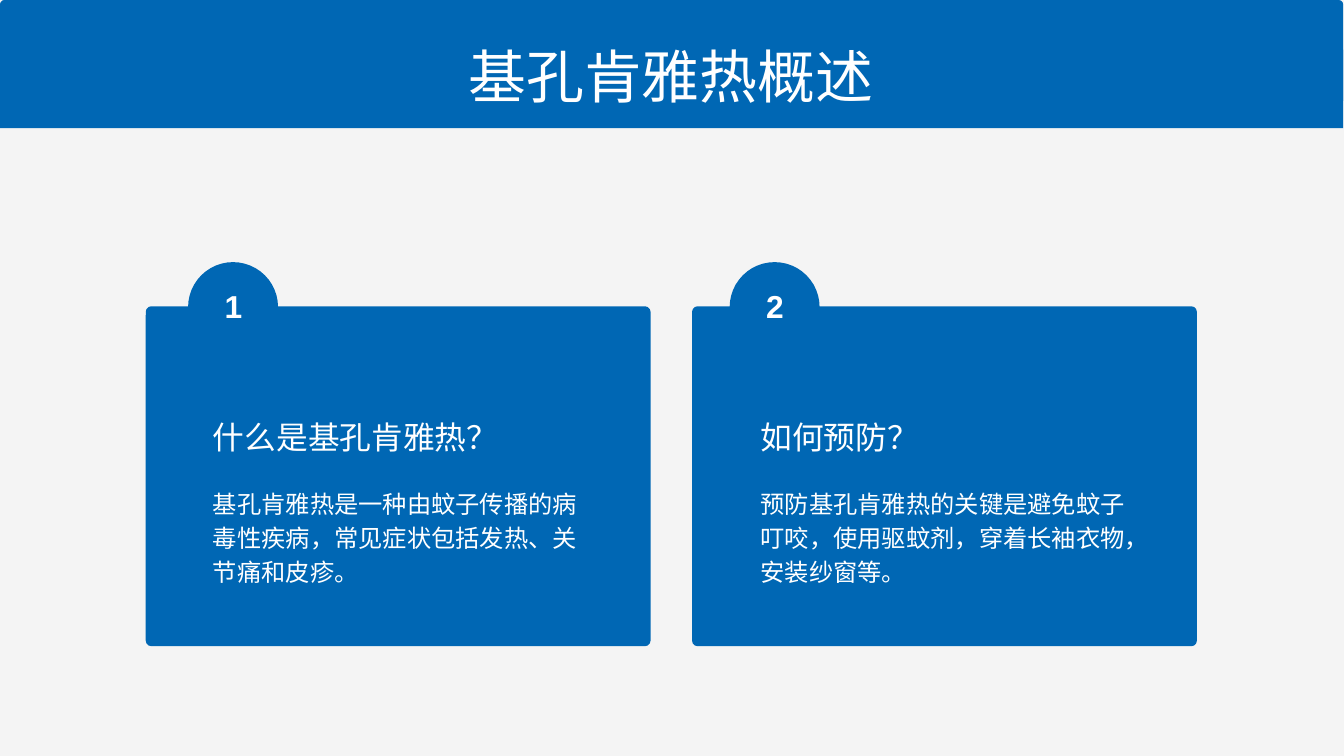
import dataclasses

import lxml.etree
import pptx
import pptx.dml.color
import pptx.enum.shapes
import pptx.enum.text
import pptx.oxml.ns
import pptx.util

Cm = pptx.util.Cm
Pt = pptx.util.Pt
Shape = pptx.enum.shapes.MSO_SHAPE
Align = pptx.enum.text.PP_ALIGN
Anchor = pptx.enum.text.MSO_ANCHOR


@dataclasses.dataclass(frozen=True)
class Theme:
    background: str = "F4F4F4"
    blue: str = "0067B4"
    white: str = "FFFFFF"
    chinese: str = "Noto Sans CJK SC"
    latin: str = "Arial"
    title: int = 62
    heading: int = 34
    body: int = 26


THEME = Theme()

# Left edges in cm of each card, its badge and its text, then the wording
CARDS = [
    (5.51, 7.11, 8.05, "什么是基孔肯雅热？",
     "基孔肯雅热是一种由蚊子传播的病毒性疾病，常见症状包括发热、关节痛和皮疹。"),
    (26.16, 27.58, 28.75, "如何预防？",
     "预防基孔肯雅热的关键是避免蚊子叮咬，使用驱蚊剂，穿着长袖衣物，安装纱窗等。"),
]


def rgb(value):
    return pptx.dml.color.RGBColor.from_string(value)


def apply_format(target, values):
    for name, value in values.items():
        setattr(target, name, value)


def add_panel(page, kind, left, top, width, height, radius=None):
    """Add a plain blue shape; radius is the corner radius in cm."""
    panel = page.shapes.add_shape(kind, Cm(left), Cm(top), Cm(width), Cm(height))
    panel.shadow.inherit = False
    panel.fill.solid()
    panel.fill.fore_color.rgb = rgb(THEME.blue)
    panel.line.fill.background()
    if radius is not None:
        panel.adjustments[0] = radius / min(width, height)


def write_text(box, text, size, spacing, font=THEME.chinese, bold=False,
               align=Align.LEFT, anchor=Anchor.TOP):
    """Put one formatted white paragraph in a box without margins."""
    apply_format(box.text_frame, {
        "word_wrap": True,
        "auto_size": pptx.enum.text.MSO_AUTO_SIZE.NONE,
        "vertical_anchor": anchor,
        "margin_left": 0, "margin_right": 0,
        "margin_top": 0, "margin_bottom": 0,
    })
    para = box.text_frame.paragraphs[0]
    apply_format(para, {"alignment": align, "line_spacing": Pt(spacing),
                        "space_before": Pt(0)})
    span = para.add_run()
    span.text = text
    apply_format(span.font, {"size": Pt(size), "name": font, "bold": bold})
    span.font.color.rgb = rgb(THEME.white)
    east_asian = lxml.etree.SubElement(
        span.font._element, pptx.oxml.ns.qn("a:ea"))
    east_asian.set("typeface", font)


def add_text(page, left, top, width, height, *content, **options):
    box = page.shapes.add_textbox(Cm(left), Cm(top), Cm(width), Cm(height))
    write_text(box, *content, **options)


def add_header(page, text):
    add_panel(page, Shape.ROUNDED_RECTANGLE, 0, 0, 50.77, 3.96, radius=0.17)
    add_panel(page, Shape.RECTANGLE, 0, 1.88, 50.77, 2.97)
    title = page.shapes.title
    apply_format(title, {"left": Cm(7.7), "top": Cm(1.09),
                         "width": Cm(35.33), "height": Cm(2.92)})
    write_text(title, text, THEME.title, 86.8, align=Align.CENTER)
    # The placeholder comes first in the stack, so lift it above the header
    page.shapes._spTree.append(title._element)


def add_badge(page, left, number):
    add_panel(page, Shape.OVAL, left, 9.91, 3.4, 3.4)
    add_text(page, left + 0.33, 9.91, 2.77, 3.1, str(number),
             THEME.heading, 47.6, font=THEME.latin, bold=True,
             align=Align.CENTER, anchor=Anchor.MIDDLE)


def add_card(page, number, card_left, badge_left, text_left, heading, body):
    add_panel(page, Shape.ROUNDED_RECTANGLE, card_left, 11.58, 19.08, 12.85,
              radius=0.21)
    add_badge(page, badge_left, number)
    add_text(page, text_left, 15.57, 13.9, 1.57, heading, THEME.heading, 47.6)
    add_text(page, text_left, 18.31, 13.9, 3.73, body, THEME.body, 36.4)


def main():
    deck = pptx.Presentation()
    apply_format(deck, {"slide_width": Cm(50.8), "slide_height": Cm(28.58)})
    page = deck.slides.add_slide(deck.slide_layouts[5])
    page.background.fill.solid()
    page.background.fill.fore_color.rgb = rgb(THEME.background)
    add_header(page, "基孔肯雅热概述")
    for number, card in enumerate(CARDS, start=1):
        add_card(page, number, *card)
    deck.save("out.pptx")


if __name__ == "__main__":
    main()
